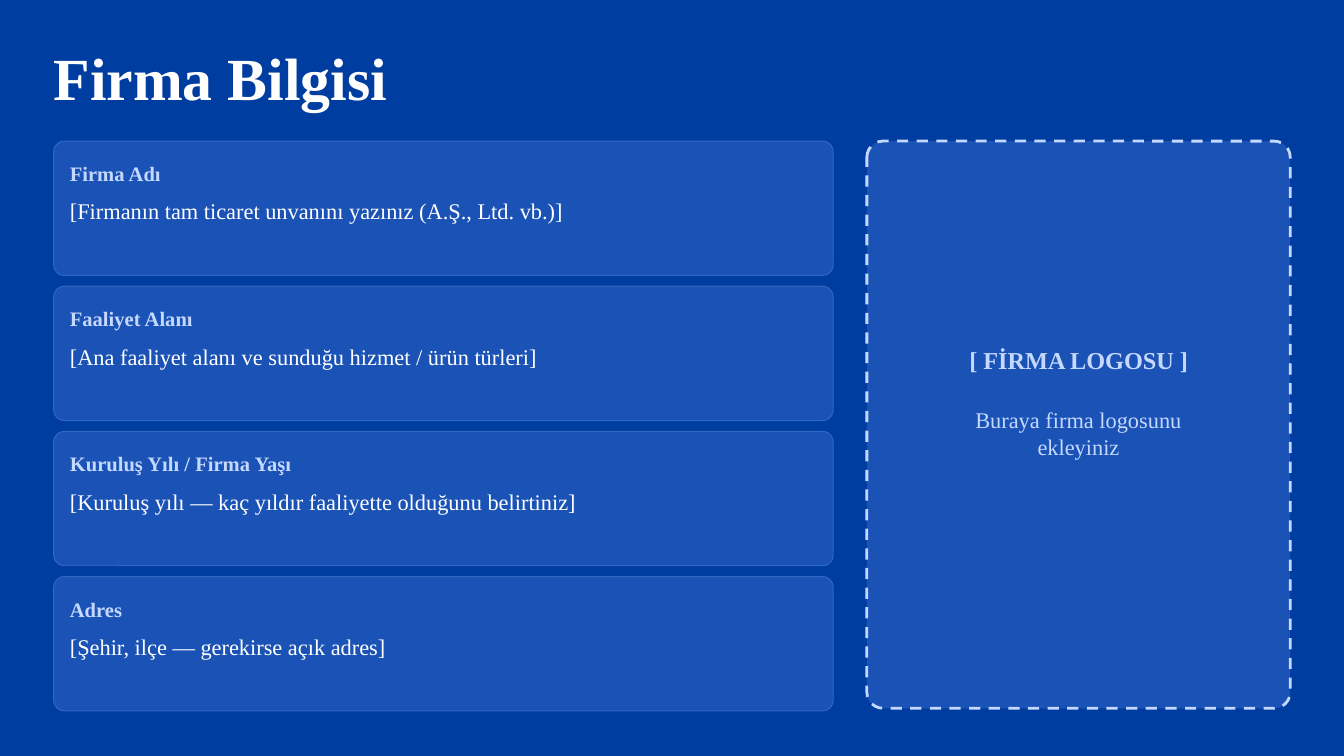
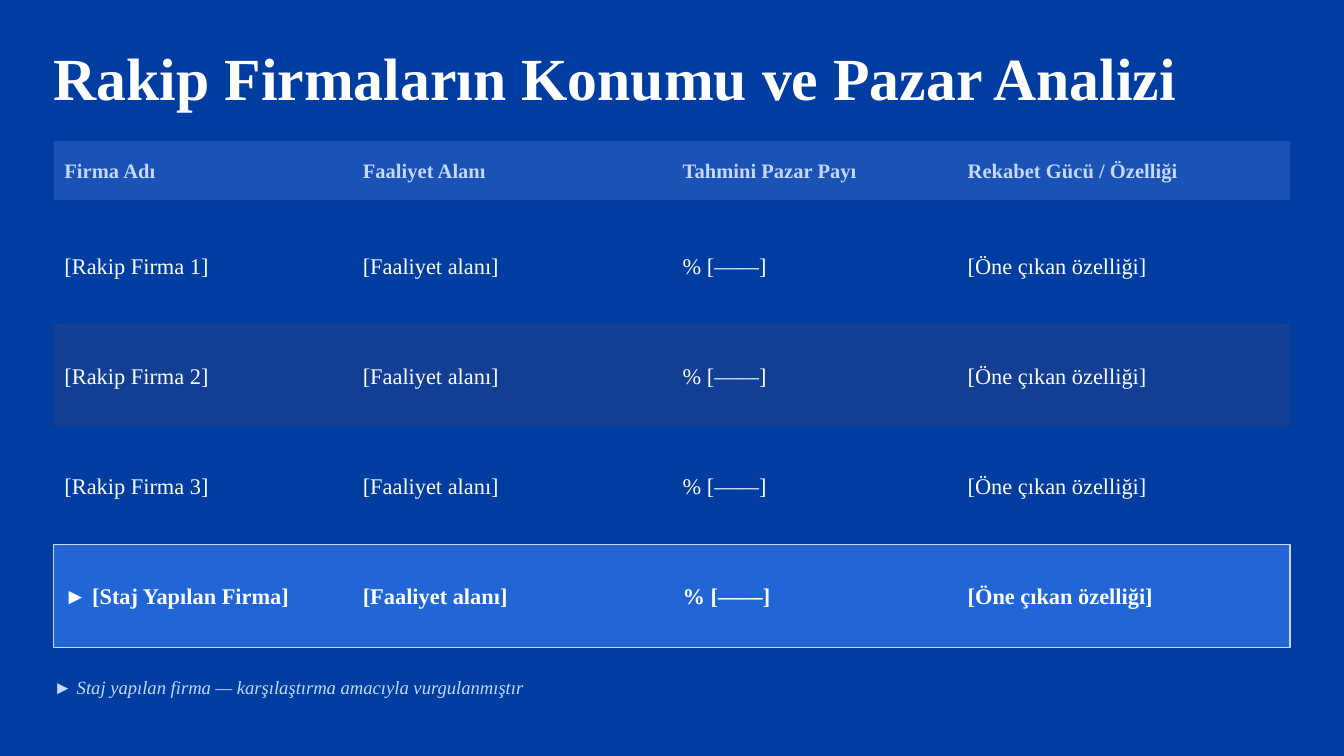
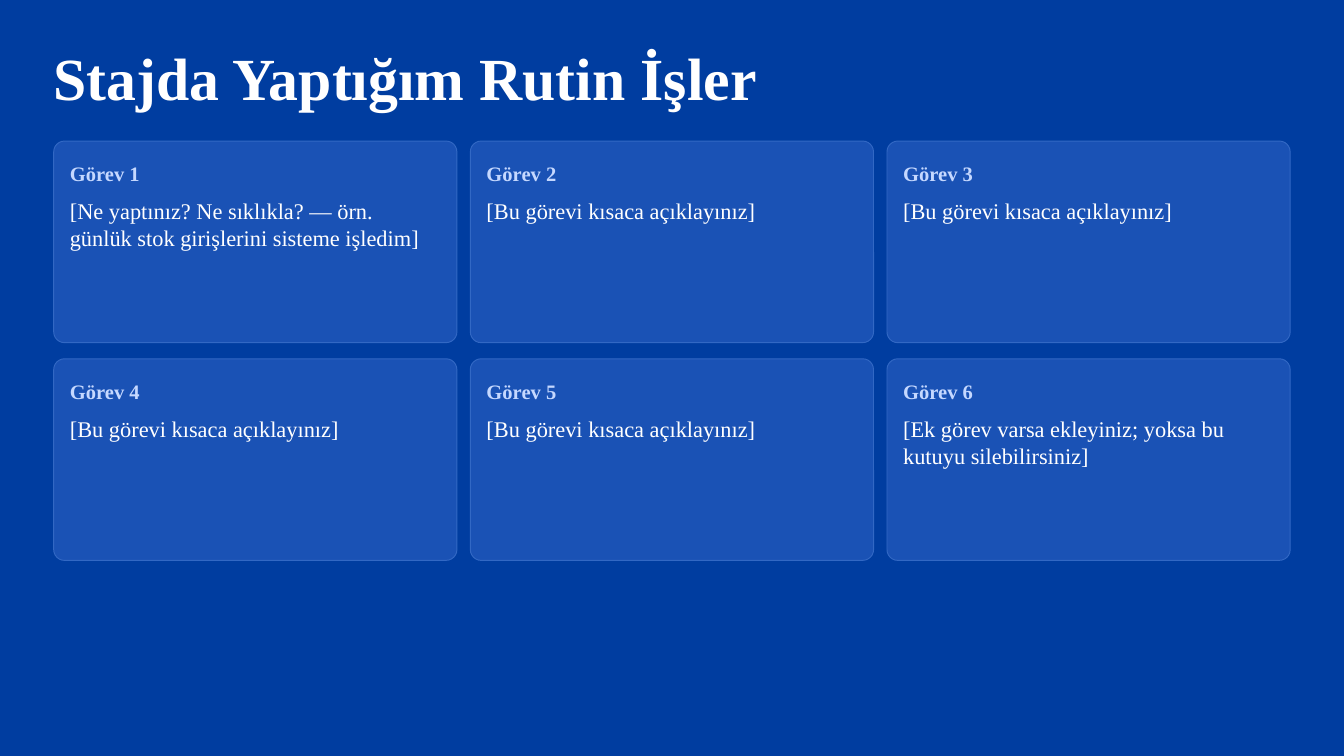
from pptx import Presentation
from pptx.dml.color import RGBColor
from pptx.enum.dml import MSO_LINE_DASH_STYLE as Dash
from pptx.enum.shapes import MSO_SHAPE as Shape
from pptx.enum.text import MSO_ANCHOR as Anchor, PP_ALIGN as Align
from pptx.util import Inches, Pt

FONT = "Times New Roman"
COLORS = {
    "background": "003DA0",
    "panel": "1A52B5",
    "panel_edge": "3268C4",
    "stripe": "123F94",
    "highlight": "2266D6",
    "pale": "C5D8FF",
    "white": "FFFFFF",
}

# Shared layout, in inches
SLIDE_WIDTH = 10
SLIDE_HEIGHT = SLIDE_WIDTH * 9 / 16
MARGIN = 0.4
CONTENT_WIDTH = 9.2
CONTENT_TOP = 1.05
CARD_PAD_X, CARD_PAD_Y = 0.12, 0.1
LABEL_HEIGHT, LABEL_STEP = 0.28, 0.32

COMPANY_FIELDS = [
    ("Firma Adı", "[Firmanın tam ticaret unvanını yazınız (A.Ş., Ltd. vb.)]"),
    ("Faaliyet Alanı", "[Ana faaliyet alanı ve sunduğu hizmet / ürün türleri]"),
    ("Kuruluş Yılı / Firma Yaşı",
     "[Kuruluş yılı — kaç yıldır faaliyette olduğunu belirtiniz]"),
    ("Adres", "[Şehir, ilçe — gerekirse açık adres]"),
]

MARKET_COLUMNS = [  # heading, left, width
    ("Firma Adı", 0.48, 1.97),
    ("Faaliyet Alanı", 2.7, 2.13),
    ("Tahmini Pazar Payı", 5.08, 1.87),
    ("Rekabet Gücü / Özelliği", 7.2, 2.38),
]
COMPETITORS = [  # company, band colour
    ("[Rakip Firma 1]", "background"),
    ("[Rakip Firma 2]", "stripe"),
    ("[Rakip Firma 3]", "background"),
    ("► [Staj Yapılan Firma]", "highlight"),
]
COMPETITOR_DETAILS = ["[Faaliyet alanı]", "% [——]", "[Öne çıkan özelliği]"]

SHORT_TASK = "[Bu görevi kısaca açıklayınız]"
TASKS = [
    "[Ne yaptınız? Ne sıklıkla? — örn. günlük stok girişlerini sisteme işledim]",
    SHORT_TASK,
    SHORT_TASK,
    SHORT_TASK,
    SHORT_TASK,
    "[Ek görev varsa ekleyiniz; yoksa bu kutuyu silebilirsiniz]",
]


def rgb(name):
    return RGBColor.from_string(COLORS[name])


def add_text(slide, lines, left, top, width, height, size=12, color="white",
             bold=False, italic=False, anchor=Anchor.MIDDLE, align=None,
             inset=(0, 0)):
    """Add a text box with one paragraph per line."""
    frame = slide.shapes.add_textbox(
        Inches(left), Inches(top), Inches(width), Inches(height)).text_frame
    frame.word_wrap = True
    frame.vertical_anchor = anchor
    frame.margin_left = frame.margin_right = Inches(inset[0])
    frame.margin_top = frame.margin_bottom = Inches(inset[1])
    frame.text = lines
    for paragraph in frame.paragraphs:
        paragraph.alignment = align
        font = paragraph.font
        font.name, font.size = FONT, Pt(size)
        font.bold, font.italic = bold, italic
        font.color.rgb = rgb(color)


def add_panel(slide, left, top, width, height, fill="panel", edge=None,
              edge_width=0.5, radius=0):
    """Add a filled rectangle; the corner radius is in inches."""
    kind = Shape.ROUNDED_RECTANGLE if radius else Shape.RECTANGLE
    panel = slide.shapes.add_shape(
        kind, Inches(left), Inches(top), Inches(width), Inches(height))
    panel.shadow.inherit = False
    if radius:
        panel.adjustments[0] = radius / min(width, height)
    panel.fill.solid()
    panel.fill.fore_color.rgb = rgb(fill)
    if edge:
        panel.line.color.rgb = rgb(edge)
        panel.line.width = Pt(edge_width)
    else:
        panel.line.fill.background()
    return panel


def add_card(slide, label, body, left, top, width, height):
    """Add a rounded card with a label above its body text."""
    add_panel(slide, left, top, width, height, edge="panel_edge", radius=0.08)
    text_left, text_width = left + CARD_PAD_X, width - 2 * CARD_PAD_X
    label_top = top + CARD_PAD_Y
    add_text(slide, label, text_left, label_top, text_width, LABEL_HEIGHT,
             size=11, color="pale", bold=True)
    add_text(slide, body, text_left, label_top + LABEL_STEP, text_width,
             height - 2 * CARD_PAD_Y - LABEL_STEP, anchor=Anchor.TOP)


def add_row(slide, values, top, height, pad, fill, edge=None, **style):
    """Add a full-width band with one text per market column."""
    add_panel(slide, MARGIN, top, CONTENT_WIDTH, height, fill, edge,
              edge_width=0.8)
    for value, (_, left, width) in zip(values, MARKET_COLUMNS):
        add_text(slide, value, left, top + pad, width, height - 2 * pad, **style)


def new_slide(deck, title):
    slide = deck.slides.add_slide(deck.slide_layouts[6])
    slide.background.fill.solid()
    slide.background.fill.fore_color.rgb = rgb("background")
    add_text(slide, title, MARGIN, 0.22, CONTENT_WIDTH, 0.7, size=32, bold=True)
    return slide


def build_company_slide(deck):
    slide = new_slide(deck, "Firma Bilgisi")
    for i, (label, body) in enumerate(COMPANY_FIELDS):
        add_card(slide, label, body, MARGIN, CONTENT_TOP + i * 1.08, 5.8, 1)

    # Logo area
    left, width = 6.45, 3.15
    frame = add_panel(slide, left, CONTENT_TOP, width, 4.22, edge="pale",
                      edge_width=1.5, radius=0.12)
    frame.line.dash_style = Dash.DASH
    hint = {"color": "pale", "align": Align.CENTER, "inset": (0.1, 0.05)}
    add_text(slide, "[ FİRMA LOGOSU ]", left, 2.45, width, 0.45,
             size=13, bold=True, **hint)
    add_text(slide, "Buraya firma logosunu\nekleyiniz", left, 2.92, width, 0.6,
             **hint)


def build_market_slide(deck):
    slide = new_slide(deck, "Rakip Firmaların Konumu ve Pazar Analizi")
    headings = [heading for heading, _, _ in MARKET_COLUMNS]
    add_row(slide, headings, CONTENT_TOP, 0.44, 0.03, "panel",
            size=11, color="pale", bold=True)
    for i, (company, fill) in enumerate(COMPETITORS):
        own = fill == "highlight"
        add_row(slide, [company] + COMPETITOR_DETAILS, 1.59 + i * 0.82, 0.77,
                0.05, fill, edge="pale" if own else None, bold=own)
    add_text(slide, "► Staj yapılan firma — karşılaştırma amacıyla vurgulanmıştır",
             MARGIN, 4.97, CONTENT_WIDTH, 0.28, size=10, color="pale",
             italic=True)


def build_tasks_slide(deck):
    slide = new_slide(deck, "Stajda Yaptığım Rutin İşler")
    for i, task in enumerate(TASKS):
        row, column = divmod(i, 3)
        add_card(slide, f"Görev {i + 1}", task, MARGIN + column * 3.1,
                 CONTENT_TOP + row * 1.62, 3, 1.5)


def main():
    deck = Presentation()
    deck.slide_width, deck.slide_height = Inches(SLIDE_WIDTH), Inches(SLIDE_HEIGHT)
    build_company_slide(deck)
    build_market_slide(deck)
    build_tasks_slide(deck)
    deck.save("out.pptx")


if __name__ == "__main__":
    main()
